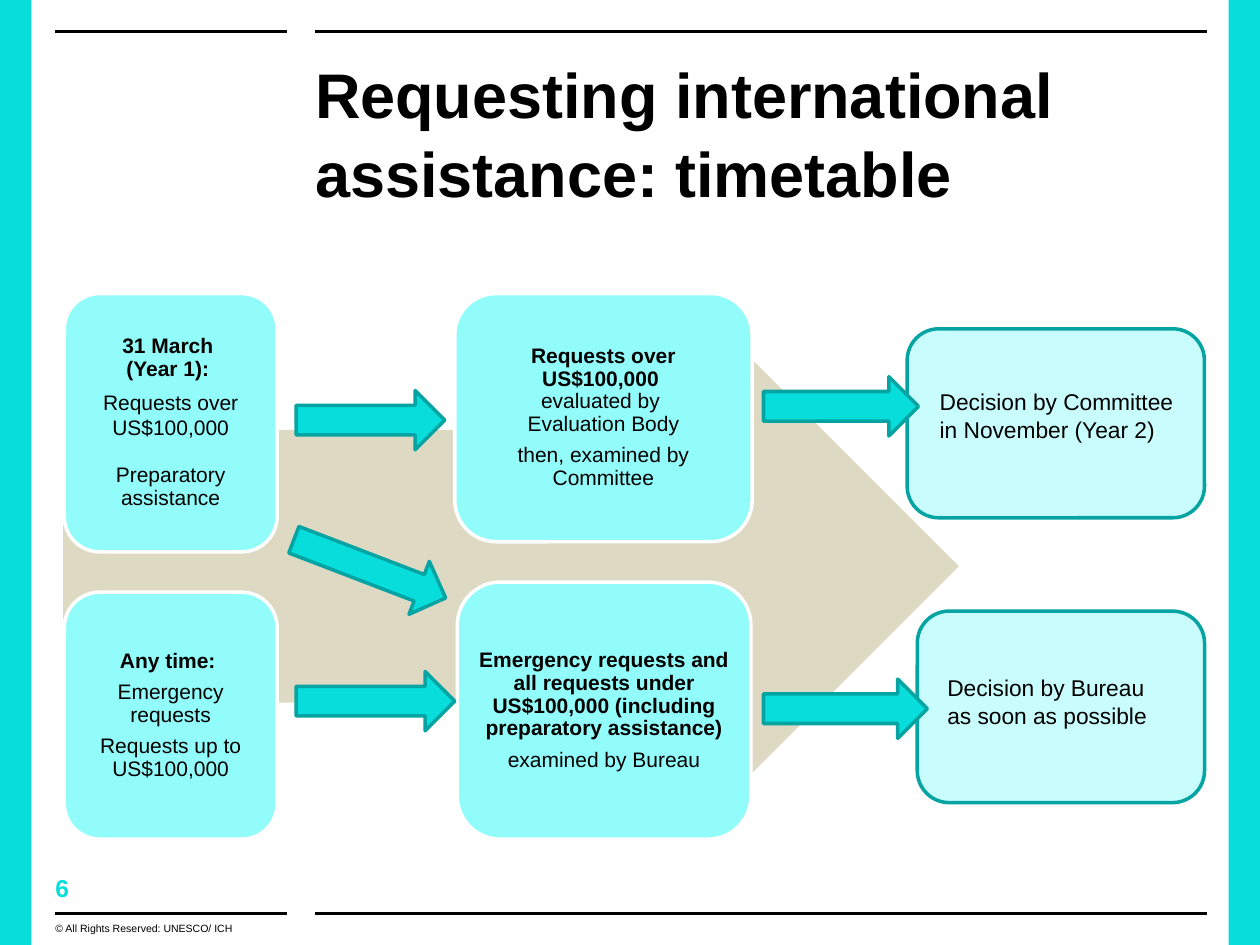
from lxml.etree import SubElement
from pptx import Presentation
from pptx.dml.color import RGBColor
from pptx.enum.shapes import MSO_CONNECTOR as Connector, MSO_SHAPE as Preset
from pptx.enum.text import MSO_ANCHOR as Anchor, PP_ALIGN as Align
from pptx.oxml.ns import qn
from pptx.util import Inches, Pt

COLORS = {"ink": "000000", "accent": "07DEDB", "edge": "05A4A2", "step": "92FCFA",
          "decision": "C9FDFD", "flow": "DDD9C3", "white": "FFFFFF"}
COLUMNS, ROWS = 100, 75

# Each paragraph: its (text, bold) runs, then its paragraph format
TIGHT = {"line_spacing": 0.9, "space_after": Pt(5)}
BEFORE_GAP = {"line_spacing": 1.0, "space_after": Pt(14)}

STEPS = [
    ((5.1, 23.3, 16.9, 20.5), [
        ([("31 March \n(Year 1): ", True)], TIGHT),
        ([("Requests over US$100,000", False)], BEFORE_GAP),
        ([("Preparatory assistance", False)], TIGHT)]),
    ((5.1, 47, 16.9, 19.6), [
        ([("Any time: ", True)], TIGHT),
        ([("Emergency requests", False)], TIGHT),
        ([("Requests up to US$100,000", False)], TIGHT)]),
    ((36.3, 46.2, 23.3, 20.4), [
        ([("Emergency requests and all requests under US$100,000 "
           "(including preparatory assistance)", True)], TIGHT),
        ([("examined by Bureau", False)], TIGHT)]),
    ((36.1, 23.3, 23.6, 19.7), [
        ([("Requests over US$100,000 \n", True),
          ("evaluated by \nEvaluation Body", False)], TIGHT),
        ([("then, examined by Committee", False)], TIGHT)]),
]
DECISIONS = [
    ((72.8, 48.5, 22.8, 15.2), (74.2, 53, 18.1, 5.4), "Decision by Bureau as soon as possible"),
    ((72, 26.1, 23.6, 15), (73.6, 30.3, 22, 5.4), "Decision by Committee in November (Year 2)"),
]
ARROWS = [  # place, rotation
    ((60.6, 29.9, 12.3, 4.7), 0),
    ((23.5, 53.3, 12.6, 4.7), 0),
    ((60.6, 53.9, 13, 4.7), 0),
    ((22.9, 42.9, 12.9, 4.5), 21),
    ((23.5, 31, 11.8, 4.7), 0),
]


class SlideBuilder:
    def __init__(self):
        self.presentation = Presentation()
        self.presentation.slide_width = Inches(10)
        self.presentation.slide_height = Inches(7.5)
        self.slide = self.presentation.slides.add_slide(self.presentation.slide_layouts[6])
        self.font_name = "Arial"
        self.line_width = Pt(2)

    def color(self, name):
        return RGBColor.from_string(COLORS[name])

    def place(self, *lengths):
        """Turn alternating column and row counts into slide lengths."""
        units = (self.presentation.slide_width / COLUMNS, self.presentation.slide_height / ROWS)
        return [round(length * units[index % 2]) for index, length in enumerate(lengths)]

    def shape(self, preset, place, fill, line=None, rotation=0):
        shape = self.slide.shapes.add_shape(preset, *self.place(*place))
        shape.shadow.inherit = False
        shape.rotation = rotation
        shape.fill.solid()
        shape.fill.fore_color.rgb = self.color(fill)
        if line:
            shape.line.color.rgb = self.color(line)
            shape.line.width = self.line_width
        else:
            shape.line.fill.background()
        return shape

    def rule(self, left, right, row):
        connector = self.slide.shapes.add_connector(
            Connector.STRAIGHT, *self.place(left, row, right, row))
        connector.line.color.rgb = self.color("ink")
        connector.line.width = self.line_width
        SubElement(connector._element.spPr, qn("a:effectLst"))

    def frame(self, shape, insets, anchor=Anchor.TOP):
        frame = shape.text_frame
        frame.word_wrap = True
        frame.vertical_anchor = anchor
        for side, inset in zip(("left", "top", "right", "bottom"), insets):
            setattr(frame, f"margin_{side}", Inches(inset))
        return frame

    def add_text(self, paragraph, runs, size, color="ink", **formats):
        for name, value in formats.items():
            setattr(paragraph, name, value)
        for text, bold in runs:
            for index, part in enumerate(text.split("\n")):
                if index:
                    paragraph.add_line_break()
                if part:
                    run = paragraph.add_run()
                    run.text = part
                    style = {"name": self.font_name, "size": Pt(size), "bold": bold}
                    for name, value in style.items():
                        setattr(run.font, name, value)
                    run.font.color.rgb = self.color(color)

    def label(self, place, text, size, bold=False, insets=(0, 0, 0, 0), **formats):
        box = self.slide.shapes.add_textbox(*self.place(*place))
        frame = self.frame(box, insets)
        self.add_text(frame.paragraphs[0], [(text, bold)], size, **formats)

    def step(self, place, paragraphs):
        shape = self.shape(Preset.ROUNDED_RECTANGLE, place, "step", "white")
        frame = self.frame(shape, (0.05,) * 4, Anchor.MIDDLE)
        for index, (runs, formats) in enumerate(paragraphs):
            paragraph = frame.add_paragraph() if index else frame.paragraphs[0]
            self.add_text(paragraph, runs, 12, alignment=Align.CENTER, **formats)


def main():
    builder = SlideBuilder()
    for left in (0, 97.5):
        builder.shape(Preset.RECTANGLE, (left, 0, 2.5, ROWS), "accent")
    for row in (2.5, 72.5):
        builder.rule(4.4, 22.8, row)
        builder.rule(25, 95.8, row)

    builder.label((25, 4.1, 70.8, 12.1), "Requesting international assistance: timetable",
                  36, bold=True, line_spacing=1.05)
    builder.label((4.4, 69.3, 11.4, 2.4), "6", 14, bold=True, color="accent")
    builder.label((4.4, 73.2, 18.3, 1.8), "© All Rights Reserved: UNESCO/ ICH", 6)

    for place, _, _ in DECISIONS:
        builder.shape(Preset.ROUNDED_RECTANGLE, place, "decision", "edge")
    builder.shape(Preset.RIGHT_ARROW, (5, 23.3, 71.1, 43.3), "flow")
    for place, paragraphs in STEPS:
        builder.step(place, paragraphs)
    for place, rotation in ARROWS:
        builder.shape(Preset.RIGHT_ARROW, place, "accent", "edge", rotation)
    for _, place, text in DECISIONS:
        builder.label(place, text, 13, insets=(0.1, 0.05, 0.1, 0.05))

    builder.presentation.save("out.pptx")


if __name__ == "__main__":
    main()
